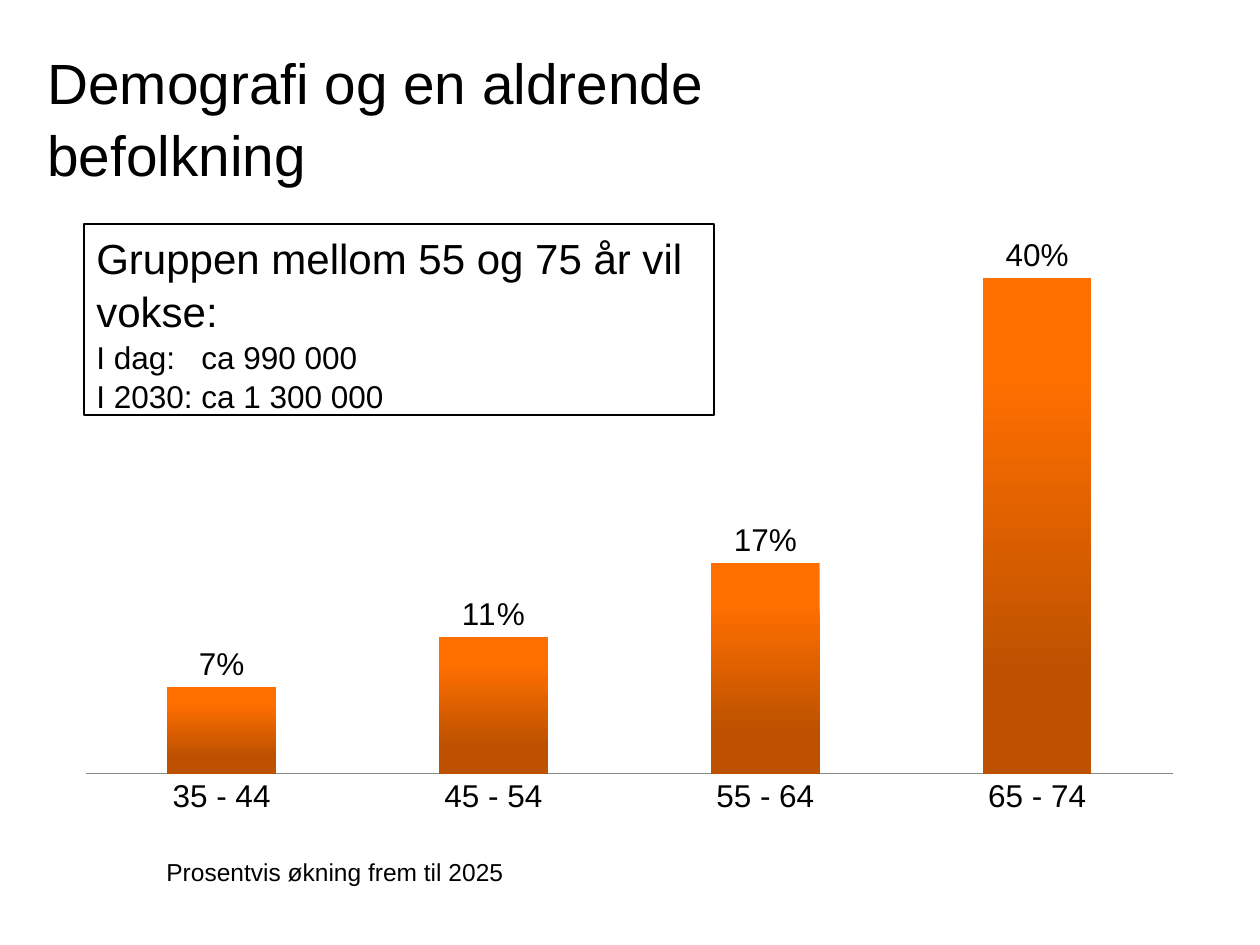
import pptx
import pptx.chart.data
import pptx.dml.color
import pptx.enum.chart
import pptx.enum.shapes
import pptx.enum.text
import pptx.oxml
import pptx.oxml.ns
import pptx.util

RGBColor = pptx.dml.color.RGBColor
BLACK = RGBColor(0x00, 0x00, 0x00)
GREY = RGBColor(0x86, 0x86, 0x86)
ORANGE = RGBColor(0xFF, 0x6F, 0x00)
BROWN = RGBColor(0xBD, 0x51, 0x00)
FONT = "Arial"
PX = 914400 // 126

TITLE = [("Demografi og en aldrende befolkning", 32.4)]
CAPTION = [("Prosentvis økning frem til 2025", 14)]
GROWTH = [
    ("Gruppen mellom 55 og 75 år vil vokse:", 24),
    ("I dag:\tca 990 000", 18),
    ("I 2030:\tca 1 300 000", 18),
]
AGES = ["35 - 44", "45 - 54", "55 - 64", "65 - 74"]
INCREASE = [0.07, 0.11, 0.17, 0.4]
TAB = 105
CHART_BOX = (63, 204, 1134, 624)
PLOT_BOX = (86, 216, 1088, 558)


def px(*lengths):
    return [n * PX for n in lengths]


def write(s, lines, anchor):
    tf = s.text_frame
    tf.word_wrap = True
    tf.vertical_anchor = anchor
    for i, (text, size) in enumerate(lines):
        p = tf.paragraphs[0] if i == 0 else tf.add_paragraph()
        p.text = text
        p.alignment = pptx.enum.text.PP_ALIGN.LEFT
        p.line_spacing = 1.05
        if "\t" in text:
            p._p.get_or_add_pPr().append(pptx.oxml.parse_xml(
                f'<a:tabLst {pptx.oxml.ns.nsdecls("a")}>'
                f'<a:tab pos="{TAB * PX}" algn="l"/></a:tabLst>'))
        p.font.size = pptx.util.Pt(size)
        p.font.name = FONT
        p.font.color.rgb = BLACK


def add_growth_chart(slide):
    data = pptx.chart.data.CategoryChartData(number_format="0%")
    data.categories = AGES
    data.add_series("Series 1", INCREASE)
    kind = pptx.enum.chart.XL_CHART_TYPE.COLUMN_CLUSTERED
    chart = slide.shapes.add_chart(kind, *px(*CHART_BOX), data).chart
    chart.has_legend = False
    chart.has_title = False
    chart.font.size = pptx.util.Pt(18)
    chart.font.name = FONT
    chart.font.color.rgb = BLACK

    no_tick = pptx.enum.chart.XL_TICK_MARK.NONE
    chart.category_axis.major_tick_mark = no_tick
    chart.category_axis.format.line.color.rgb = GREY
    axis = chart.value_axis
    axis.visible = False
    axis.has_major_gridlines = False
    axis.minimum_scale, axis.maximum_scale = 0, 0.45

    plot = chart.plots[0]
    plot.gap_width = 150
    plot.vary_by_categories = False
    plot.has_data_labels = True
    labels = plot.data_labels
    labels.show_value = True
    labels.number_format = "0%"
    labels.number_format_is_linked = False
    labels.position = pptx.enum.chart.XL_LABEL_POSITION.OUTSIDE_END

    fill = plot.series[0].format.fill
    fill.gradient()
    fill.gradient_angle = 270
    for stop, color, position in zip(fill.gradient_stops, (ORANGE, BROWN), (0.2, 0.8)):
        stop.color.rgb = color
        stop.position = position

    left, top, width, height = CHART_BOX
    x, y, w, h = PLOT_BOX
    shares = {"x": (x - left) / width, "y": (y - top) / height,
              "w": w / width, "h": h / height}
    modes = '<c:layoutTarget val="inner"/><c:xMode val="edge"/><c:yMode val="edge"/>'
    sizes = "".join(f'<c:{k} val="{v:.3f}"/>' for k, v in shares.items())
    area = chart._chartSpace.chart.plotArea
    for old in area.findall(pptx.oxml.ns.qn("c:layout")):
        area.remove(old)
    area.insert(0, pptx.oxml.parse_xml(
        f'<c:layout {pptx.oxml.ns.nsdecls("c")}>'
        f'<c:manualLayout>{modes}{sizes}</c:manualLayout></c:layout>'))


def main():
    prs = pptx.Presentation()
    prs.slide_width, prs.slide_height = px(1260, 945)
    slide = prs.slides.add_slide(prs.slide_layouts[6])
    anchors = pptx.enum.text.MSO_ANCHOR

    write(slide.shapes.add_textbox(*px(35, 37, 954, 158)), TITLE, anchors.MIDDLE)
    add_growth_chart(slide)
    write(slide.shapes.add_textbox(*px(154, 849, 665, 43)), CAPTION, anchors.TOP)

    rect = pptx.enum.shapes.MSO_SHAPE.RECTANGLE
    s = slide.shapes.add_shape(rect, *px(84, 224, 630, 191))
    s.shadow.inherit = False
    s.fill.background()
    s.line.color.rgb = BLACK
    s.line.width = pptx.util.Pt(0.75)
    write(s, GROWTH, anchors.TOP)

    prs.save("out.pptx")


if __name__ == "__main__":
    main()
